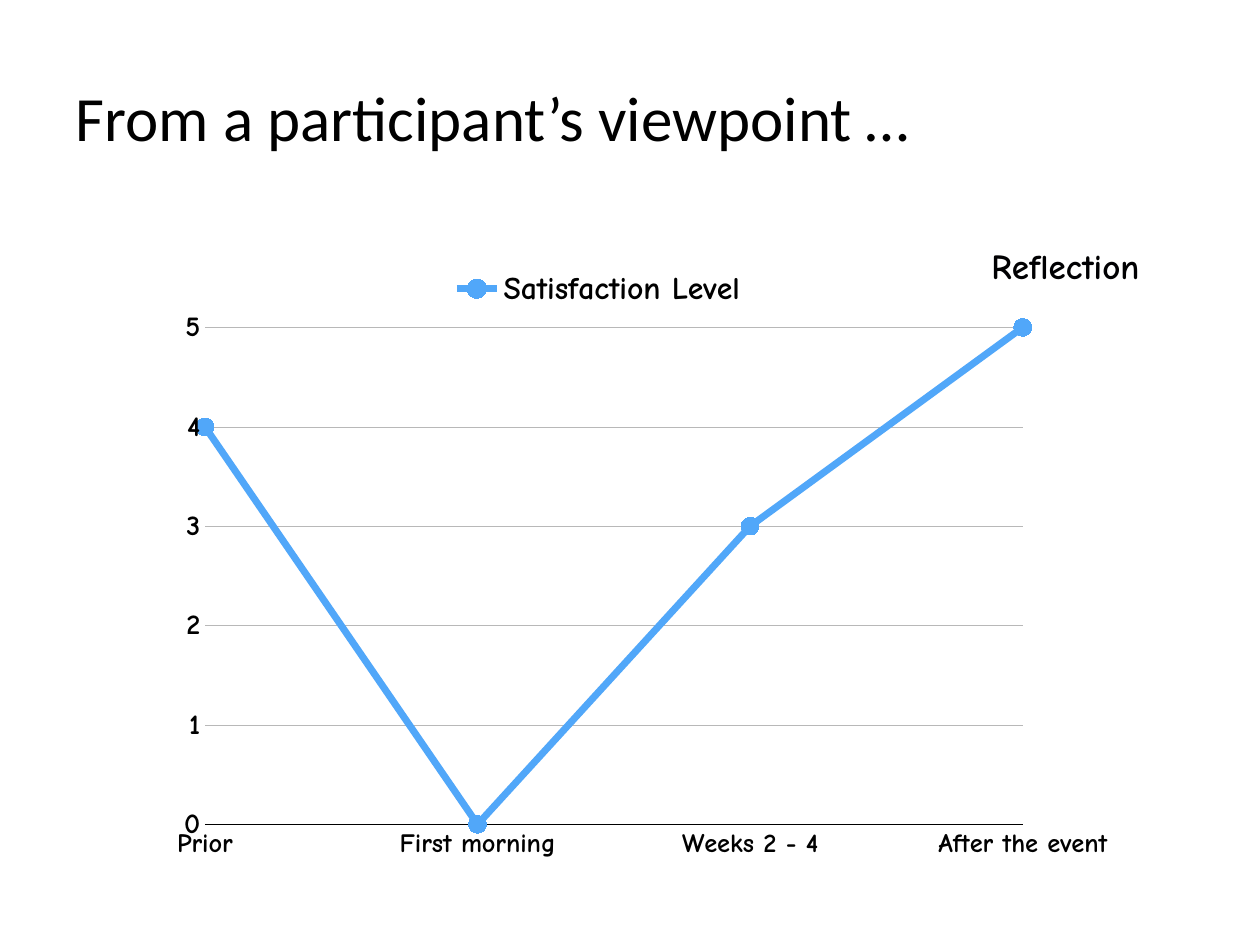
from lxml import etree
from pptx import Presentation
from pptx.chart.data import CategoryChartData
from pptx.dml.color import RGBColor
from pptx.enum.chart import XL_CHART_TYPE, XL_LEGEND_POSITION, XL_MARKER_STYLE, XL_TICK_MARK
from pptx.enum.text import MSO_ANCHOR, PP_ALIGN
from pptx.oxml.ns import qn
from pptx.util import Pt

LINE_MARKERS = XL_CHART_TYPE.LINE_MARKERS
LEGEND_TOP = XL_LEGEND_POSITION.TOP
CIRCLE = XL_MARKER_STYLE.CIRCLE
NO_TICK = XL_TICK_MARK.NONE
MIDDLE = MSO_ANCHOR.MIDDLE
LEFT = PP_ALIGN.LEFT

BLACK = RGBColor(0x00, 0x00, 0x00)
NEAR_BLACK = RGBColor(0x00, 0x00, 0x02)
WHITE = RGBColor(0xFF, 0xFF, 0xFF)
BLUE = RGBColor(0x51, 0xA7, 0xF9)
GREY = RGBColor(0xB8, 0xB8, 0xB8)

TITLE_FONT = "Calibri"
HAND_FONT = "Comic Neue"
TITLE_ONLY = 5

STAGES = ["Prior", "First morning", "Weeks 2 - 4", "After the event"]
SATISFACTION = [4, 0, 3, 5]


def set_font(font, name, size, color=BLACK, bold=False):
    font.name = name
    font.size = Pt(size)
    font.bold = bold
    font.color.rgb = color


def set_line(line, color, width):
    line.color.rgb = color
    line.width = Pt(width)


def set_layout(element, index, inner=False, **fractions):
    """Place a chart part by x, y, w, h fractions; index is the layout's place in the schema."""
    for old in element.findall(qn("c:layout")):
        element.remove(old)
    layout = etree.Element(qn("c:layout"))
    element.insert(index, layout)
    manual = etree.SubElement(layout, qn("c:manualLayout"))
    values = {"layoutTarget": "inner"} if inner else {}
    values.update(xMode="edge", yMode="edge", **fractions)
    for tag, value in values.items():
        etree.SubElement(manual, qn(f"c:{tag}")).set("val", str(value))


def add_title(slide, text):
    s = slide.shapes.title
    s.left, s.top, s.width, s.height = Pt(36), Pt(21.6), Pt(493.2), Pt(90)
    tf = s.text_frame
    tf.text = text
    tf.vertical_anchor = MIDDLE
    p = tf.paragraphs[0]
    p.alignment = LEFT
    set_font(p.font, TITLE_FONT, 36)


def add_label(slide, text, left, top, width, height):
    tf = slide.shapes.add_textbox(Pt(left), Pt(top), Pt(width), Pt(height)).text_frame
    tf.word_wrap = True
    tf.margin_left = tf.margin_right = tf.margin_top = tf.margin_bottom = Pt(3.6)
    tf.text = text
    set_font(tf.paragraphs[0].font, HAND_FONT, 20, NEAR_BLACK, bold=True)


def start_on_axis(value_axis):
    """Put the first and last points on the edges of the plot; needs the major unit set."""
    cross = etree.Element(qn("c:crossBetween"))
    cross.set("val", "midCat")
    value_axis._element.find(qn("c:majorUnit")).addprevious(cross)


def style_axes(chart):
    stages, level = chart.category_axis, chart.value_axis
    for axis, size in ((stages, 15.1), (level, 16.1)):
        axis.major_tick_mark = axis.minor_tick_mark = NO_TICK
        set_font(axis.tick_labels.font, HAND_FONT, size, bold=True)
    set_line(stages.format.line, BLACK, 1)
    level.format.line.fill.background()
    level.minimum_scale, level.maximum_scale, level.major_unit = 0, 5, 1
    level.has_major_gridlines = True
    set_line(level.major_gridlines.format.line, GREY, 0.25)
    start_on_axis(level)


def style_series(series):
    series.smooth = False
    set_line(series.format.line, BLUE, 4)
    marker = series.marker
    marker.style = CIRCLE
    marker.size = 10
    marker.format.fill.solid()
    marker.format.fill.fore_color.rgb = BLUE
    set_line(marker.format.line, WHITE, 1)


def add_legend(chart):
    chart.has_legend = True
    legend = chart.legend
    legend.position = LEGEND_TOP
    legend.include_in_layout = True
    set_font(legend.font, HAND_FONT, 18.1, bold=True)
    set_layout(legend._element, 1, x=0.3, y=0.01, w=0.31, h=0.07)


def add_satisfaction_chart(slide):
    data = CategoryChartData()
    data.categories = STAGES
    data.add_series("Satisfaction Level", SATISFACTION)
    chart = slide.shapes.add_chart(
        LINE_MARKERS, Pt(90), Pt(149), Pt(553.7), Pt(356.4), data).chart
    chart.has_title = False
    set_font(chart.font, TITLE_FONT, 10)
    plot = chart.plots[0]
    plot.vary_by_categories = False
    style_axes(chart)
    style_series(plot.series[0])
    add_legend(chart)
    plot_area = chart._chartSpace.chart.plotArea
    set_layout(plot_area, 0, inner=True, x=0.049, y=0.107, w=0.844, h=0.797)


def main():
    prs = Presentation()
    prs.slide_width, prs.slide_height = Pt(720), Pt(540)
    slide = prs.slides.add_slide(prs.slide_layouts[TITLE_ONLY])
    add_title(slide, "From a participant’s viewpoint …")
    add_satisfaction_chart(slide)
    add_label(slide, "Reflection", 563, 136, 124.6, 35.3)
    prs.save("out.pptx")


if __name__ == "__main__":
    main()
